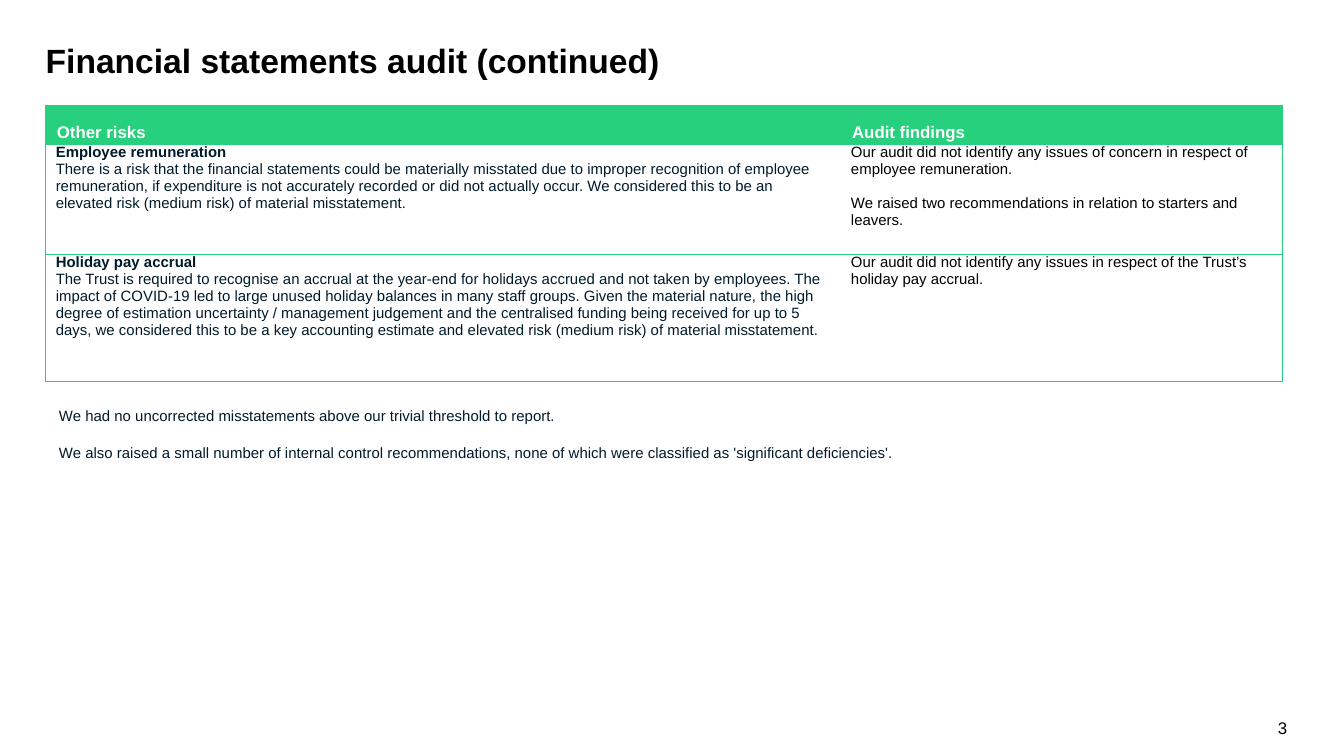
from dataclasses import dataclass

import pptx
import pptx.dml.color
import pptx.enum.text
import pptx.oxml
import pptx.oxml.ns
import pptx.util

Pt = pptx.util.Pt
RGBColor = pptx.dml.color.RGBColor


@dataclass(frozen=True)
class Theme:
    font: str = "Arial"
    green: str = "26D07C"
    navy: str = "001A29"
    black: str = "000000"
    white: str = "FFFFFF"
    title_size: float = 18
    header_size: float = 9
    body_size: float = 8
    border_width: float = 0.5
    paragraph_gap: float = 9


THEME = Theme()
LEFT = 24.5
COLUMN_WIDTHS = (426, 236.4)
ROW_HEIGHTS = (21, 59, 68.4)
HEADERS = ("Other risks", "Audit findings")
RISKS = (
    (
        "Employee remuneration",
        "There is a risk that the financial statements could be materially misstated due to "
        "improper recognition of employee remuneration, if expenditure is not accurately "
        "recorded or did not actually occur. We considered this to be an elevated risk "
        "(medium risk) of material misstatement.",
        (
            "Our audit did not identify any issues of concern in respect of employee remuneration.",
            "We raised two recommendations in relation to starters and leavers.",
        ),
    ),
    (
        "Holiday pay accrual",
        "The Trust is required to recognise an accrual at the year-end for holidays accrued "
        "and not taken by employees. The impact of COVID-19 led to large unused holiday "
        "balances in many staff groups. Given the material nature, the high degree of "
        "estimation uncertainty / management judgement and the centralised funding being "
        "received for up to 5 days, we considered this to be a key accounting estimate and "
        "elevated risk (medium risk) of material misstatement.",
        ("Our audit did not identify any issues in respect of the Trust’s holiday pay accrual.",),
    ),
)
CONCLUSIONS = (
    "We had no uncorrected misstatements above our trivial threshold to report.",
    "We also raised a small number of internal control recommendations, none of which "
    "were classified as 'significant deficiencies'.",
)


def set_attributes(target, values):
    for name, value in values.items():
        setattr(target, name, value)


def write_paragraphs(frame, texts, size, color, bold=False, gap=0):
    """Replace the frame's text; gap is the space before all but the first paragraph."""
    frame.text = "\n".join(texts)
    for index, paragraph in enumerate(frame.paragraphs):
        set_attributes(paragraph, {
            "alignment": pptx.enum.text.PP_ALIGN.LEFT,
            "space_before": Pt(gap if index else 0),
        })
        set_attributes(paragraph.font, {"name": THEME.font, "size": Pt(size), "bold": bold})
        paragraph.font.color.rgb = RGBColor.from_string(color)


def add_title(slide, text):
    title = slide.shapes.title
    set_attributes(title, {"left": Pt(LEFT), "top": Pt(10.8), "width": Pt(683), "height": Pt(45.4)})
    set_attributes(title.text_frame, {
        "margin_left": 0, "margin_top": Pt(10.5), "margin_right": 0, "margin_bottom": 0,
        "vertical_anchor": pptx.enum.text.MSO_ANCHOR.TOP,
    })
    write_paragraphs(title.text_frame, [text], THEME.title_size, THEME.black, bold=True)


def add_text(slide, texts, left, top, width, height, size, color):
    frame = slide.shapes.add_textbox(Pt(left), Pt(top), Pt(width), Pt(height)).text_frame
    frame.word_wrap = True
    write_paragraphs(frame, texts, size, color, gap=THEME.paragraph_gap + 1)


def set_borders(cell, green_sides):
    """Draw the named sides in green and leave the others without a line."""
    properties = cell._tc.get_or_add_tcPr()
    for index, side in enumerate("LRTB"):
        fill = "<a:noFill/>"
        if side in green_sides:
            fill = f'<a:solidFill><a:srgbClr val="{THEME.green}"/></a:solidFill>'
        line = pptx.oxml.parse_xml(
            f'<a:ln{side} {pptx.oxml.ns.nsdecls("a")} w="{Pt(THEME.border_width)}">{fill}</a:ln{side}>'
        )
        properties.insert(index, line)


def format_cell(cell, side_margin, outer_side):
    set_attributes(cell, {
        "margin_left": Pt(side_margin), "margin_right": Pt(side_margin),
        "margin_top": 0, "margin_bottom": 0,
        "vertical_anchor": pptx.enum.text.MSO_ANCHOR.TOP,
    })
    set_borders(cell, outer_side + "TB")


def fill_header(cell, text):
    cell.fill.solid()
    cell.fill.fore_color.rgb = RGBColor.from_string(THEME.green)
    write_paragraphs(cell.text_frame, [text], THEME.header_size, THEME.white, bold=True)
    paragraph = cell.text_frame.paragraphs[0]
    paragraph.line_spacing = 2.0
    paragraph._p.get_or_add_pPr().set("marL", str(Pt(6)))


def add_risk_table(slide):
    table = slide.shapes.add_table(
        len(ROW_HEIGHTS), len(COLUMN_WIDTHS), Pt(LEFT), Pt(56.2),
        Pt(sum(COLUMN_WIDTHS)), Pt(sum(ROW_HEIGHTS)),
    ).table
    set_attributes(table, {"first_row": False, "horz_banding": False})
    for column, width in zip(table.columns, COLUMN_WIDTHS):
        column.width = Pt(width)
    for row, height in zip(table.rows, ROW_HEIGHTS):
        row.height = Pt(height)

    for column_index, (text, outer_side) in enumerate(zip(HEADERS, "LR")):
        header = table.cell(0, column_index)
        fill_header(header, text)
        format_cell(header, 0, outer_side)

    for row_index, (name, description, findings) in enumerate(RISKS, start=1):
        risk, finding = table.cell(row_index, 0), table.cell(row_index, 1)
        write_paragraphs(risk.text_frame, [name, description], THEME.body_size, THEME.navy)
        risk.text_frame.paragraphs[0].font.bold = True
        write_paragraphs(finding.text_frame, findings, THEME.body_size, THEME.black,
                         gap=THEME.paragraph_gap)
        for cell, outer_side in ((risk, "L"), (finding, "R")):
            cell.fill.background()
            format_cell(cell, 5.4, outer_side)


def main():
    presentation = pptx.Presentation()
    set_attributes(presentation, {"slide_width": Pt(720), "slide_height": Pt(405)})
    slide = presentation.slides.add_slide(presentation.slide_layouts[5])
    add_title(slide, "Financial statements audit (continued)")
    add_risk_table(slide)
    add_text(slide, CONCLUSIONS, LEFT, 214.5, 687.6, 36, THEME.body_size, THEME.navy)
    add_text(slide, ["3"], 677.5, 381, 30, 18, THEME.header_size, THEME.black)
    presentation.save("out.pptx")


if __name__ == "__main__":
    main()
